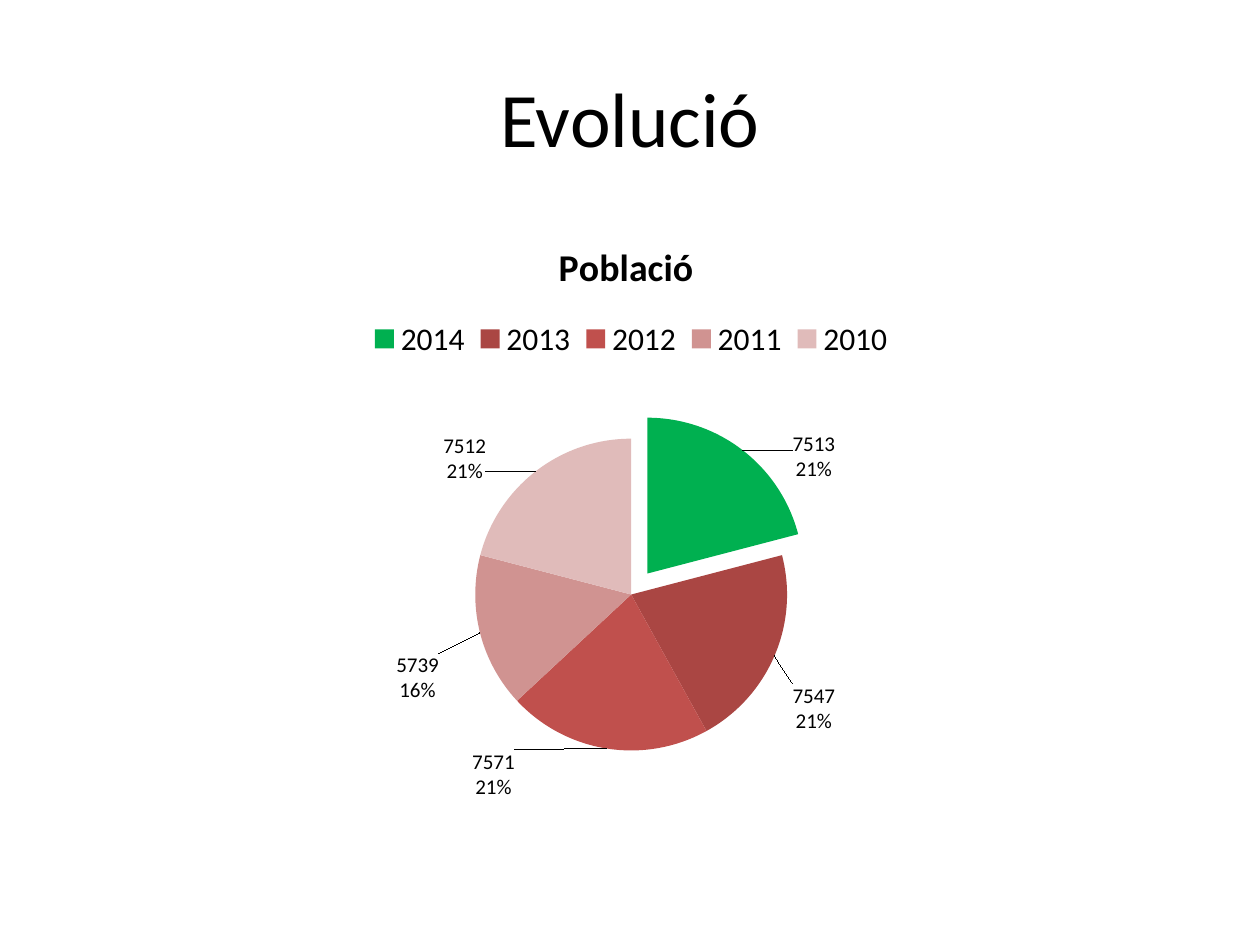
"""Build the population slide with an exploded pie chart."""
from lxml import etree
from pptx import Presentation
from pptx.chart.data import CategoryChartData
from pptx.dml.color import RGBColor
from pptx.enum import chart as ch, text
from pptx.oxml import ns
from pptx.util import Inches, Pt

BLACK = RGBColor(0, 0, 0)
GREEN = RGBColor(0x00, 0xB0, 0x50)
DARK_RED = RGBColor(0xAA, 0x46, 0x43)
RED = RGBColor(0xC0, 0x50, 0x4D)
ROSE = RGBColor(0xD0, 0x93, 0x91)
PALE_ROSE = RGBColor(0xE0, 0xBB, 0xBA)

TITLE = "Evolució"
SERIES = "Població"
YEARS = [
    ("2014", 7513, GREEN, (0.04, 0.06)),
    ("2013", 7547, DARK_RED, (0.01, 0.04)),
    ("2012", 7571, RED, (-0.08, -0.01)),
    ("2011", 5739, ROSE, (-0.03, 0.03)),
    ("2010", 7512, PALE_ROSE, (-0.04, 0.03)),
]
EXPLOSION = 17


def style_font(font, size, bold=False, color=BLACK):
    font.name, font.size, font.bold = "Calibri", Pt(size), bold
    font.color.rgb = color


def write(tf, content, **style):
    p = tf.paragraphs[0]
    p.alignment = text.PP_ALIGN.CENTER
    r = p.add_run()
    r.text = content
    style_font(r.font, **style)


def add_tag(parent, tag, **attrs):
    return etree.SubElement(parent, ns.qn("c:" + tag), attrs)


def place(element, index, **values):
    for old in element.findall(ns.qn("c:layout")):
        element.remove(old)
    layout = etree.Element(ns.qn("c:layout"))
    manual = add_tag(layout, "manualLayout")
    for tag, value in values.items():
        add_tag(manual, tag, val=str(value))
    element.insert(index, layout)


def add_pie(slide):
    data = CategoryChartData()
    data.categories = [year for year, *_ in YEARS]
    data.add_series(SERIES, [value for _, value, *_ in YEARS])
    chart = slide.shapes.add_chart(
        ch.XL_CHART_TYPE.PIE, Inches(0.51), Inches(1.7), Inches(9), Inches(4.95), data
    ).chart
    style_font(chart.font, 18)

    chart.has_title = True
    write(chart.chart_title.text_frame, SERIES, size=21.6, bold=True)
    place(chart.chart_title._element, 1, xMode="edge", yMode="edge", x=0.43, y=0.03)

    chart.has_legend = True
    chart.legend.position = ch.XL_LEGEND_POSITION.TOP
    chart.legend.include_in_layout = False
    style_font(chart.legend.font, 18)
    place(chart.legend._element, 1, xMode="edge", yMode="edge",
          x=0.26, y=0.16, w=0.48, h=0.08)

    plot = chart.plots[0]
    plot.vary_by_categories = True
    place(plot._element.getparent(), 0, layoutTarget="inner", xMode="edge",
          yMode="edge", x=0.36, y=0.36, w=0.28, h=0.5)
    style_slices(plot.series[0])


def style_slices(series):
    labels = series.data_labels
    labels.show_value = labels.show_percentage = True
    labels.position = ch.XL_LABEL_POSITION.OUTSIDE_END
    style_font(labels.font, 12)
    for i, (_, _, color, (dx, dy)) in enumerate(YEARS):
        point = series.points[i]
        point.format.fill.solid()
        point.format.fill.fore_color.rgb = color
        label = point.data_label
        style_font(label.font, 12)
        label.position = ch.XL_LABEL_POSITION.OUTSIDE_END
        d_lbl = series._element.xpath(f"c:dLbls/c:dLbl[c:idx/@val='{i}']")[0]
        d_lbl.find(ns.qn("c:showPercent")).set("val", "1")
        add_tag(d_lbl, "separator").text = "\n"
        place(d_lbl, 1, x=dx, y=dy)
    first = series._element.xpath("c:dPt[c:idx/@val='0']")[0]
    explosion = etree.Element(ns.qn("c:explosion"), val=str(EXPLOSION))
    first.find(ns.qn("c:spPr")).addprevious(explosion)


def main():
    prs = Presentation()
    prs.slide_width, prs.slide_height = Inches(10), Inches(7.5)
    slide = prs.slides.add_slide(prs.slide_layouts[5])
    title = slide.shapes.title
    title.left, title.top = Inches(0.5), Inches(0.3)
    title.width, title.height = Inches(9), Inches(1.25)
    title.text_frame.vertical_anchor = text.MSO_ANCHOR.MIDDLE
    write(title.text_frame, TITLE, size=44)
    add_pie(slide)
    prs.save("out.pptx")


if __name__ == "__main__":
    main()
